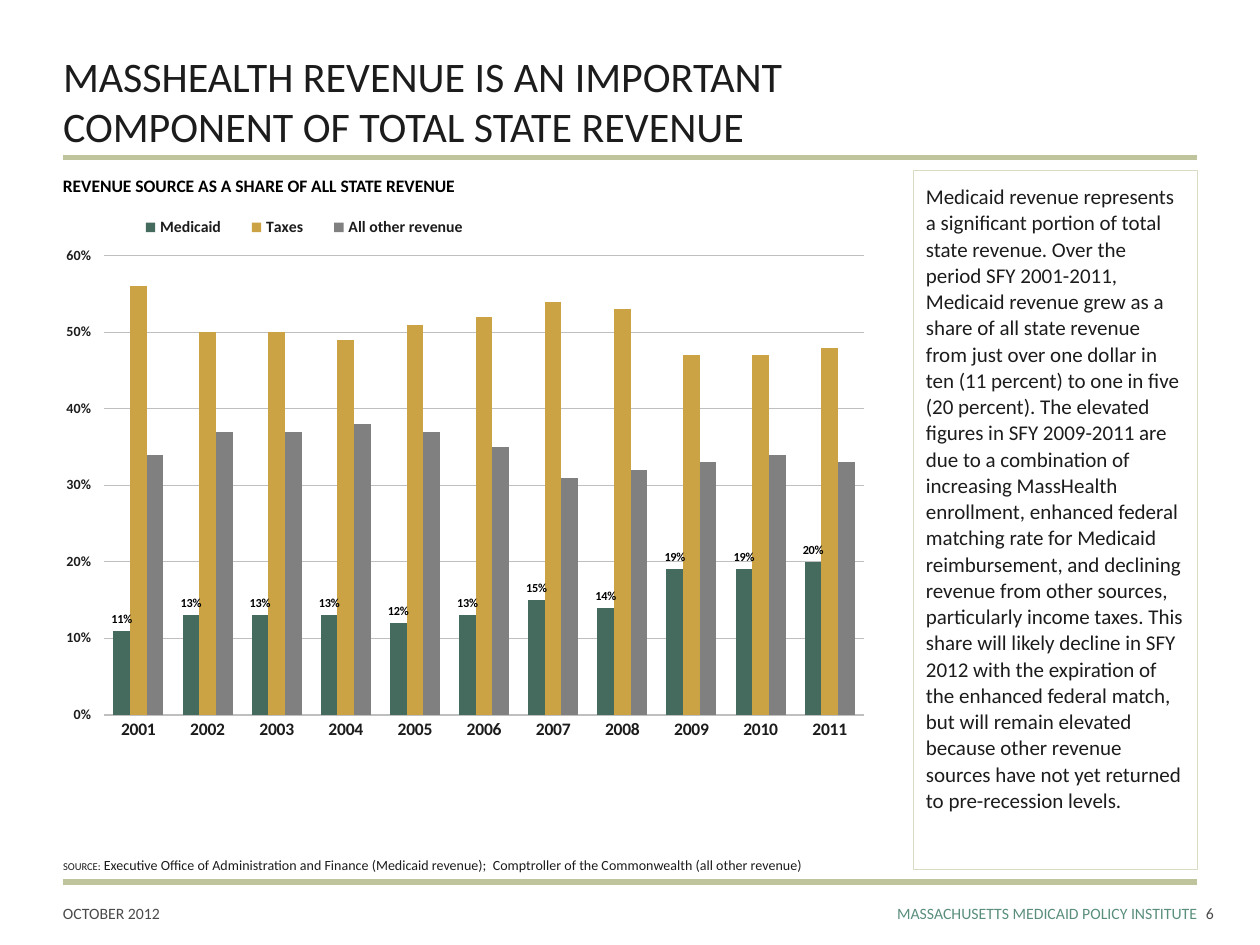
import lxml.etree
import pptx
import pptx.chart.data
import pptx.dml.color
import pptx.enum.chart
import pptx.enum.shapes
import pptx.enum.text
import pptx.oxml
import pptx.oxml.ns
import pptx.util

PX = 9144
FONT = "Calibri"
INK, BLACK, GREY, GREEN, RULE = "1C1C1C", "000000", "4B4B4B", "5A8F7C", "BFC49D"
ALIGN = pptx.enum.text.PP_ALIGN
ANCHOR = pptx.enum.text.MSO_ANCHOR

YEARS = [str(year) for year in range(2001, 2012)]
SERIES = [
    ("Medicaid", "446B5D", [0.11, 0.13, 0.13, 0.13, 0.12, 0.13, 0.15, 0.14, 0.19, 0.19, 0.2]),
    ("Taxes", "CBA344", [0.56, 0.5, 0.5, 0.49, 0.51, 0.52, 0.54, 0.53, 0.47, 0.47, 0.48]),
    ("All other revenue", "808080", [0.34, 0.37, 0.37, 0.38, 0.37, 0.35, 0.31, 0.32, 0.33, 0.34, 0.33]),
]
COMMENTARY = (
    "Medicaid revenue represents a significant portion of total state revenue. "
    "Over the period SFY 2001-2011, Medicaid revenue grew as a share of all state revenue "
    "from just over one dollar in ten (11 percent) to one in five (20 percent). "
    "The elevated figures in SFY 2009-2011 are due to a combination of increasing MassHealth "
    "enrollment, enhanced federal matching rate for Medicaid reimbursement, and declining "
    "revenue from other sources, particularly income taxes. This share will likely decline in "
    "SFY 2012 with the expiration of the enhanced federal match, but will remain elevated "
    "because other revenue sources have not yet returned to pre-recession levels."
)


def emu(*lengths):
    """Turn px lengths into EMU."""
    return [length * PX for length in lengths]


def color(value):
    """Return the RGB colour of a hex string."""
    return pptx.dml.color.RGBColor.from_string(value)


def style_font(font, size, value, bold=False):
    """Set face, size, colour and weight of a font."""
    font.name, font.size, font.bold = FONT, pptx.util.Pt(size), bold
    font.color.rgb = color(value)


def add_run(paragraph, text, size, value, bold=False):
    """Append one formatted run."""
    run = paragraph.add_run()
    run.text = text
    style_font(run.font, size, value, bold)


def prepare_frame(shape, insets, anchor=ANCHOR.TOP, wrap=True):
    """Set up the text frame of a shape and return its first paragraph."""
    frame = shape.text_frame
    frame.auto_size = pptx.enum.text.MSO_AUTO_SIZE.NONE
    frame.word_wrap, frame.vertical_anchor = wrap, anchor
    frame.margin_left, frame.margin_top, frame.margin_right, frame.margin_bottom = emu(*insets)
    paragraph = frame.paragraphs[0]
    paragraph.alignment = ALIGN.LEFT
    return paragraph


def add_text(slide, box, runs, insets=(0, 0, 0, 0), anchor=ANCHOR.TOP, wrap=True, align=ALIGN.LEFT):
    """Add a text box made of (text, size, colour, bold) runs."""
    paragraph = prepare_frame(slide.shapes.add_textbox(*emu(*box)), insets, anchor, wrap)
    paragraph.alignment = align
    for run in runs:
        add_run(paragraph, *run)


def add_rule(slide, left, top, width):
    """Draw a horizontal rule."""
    rule = slide.shapes.add_connector(
        pptx.enum.shapes.MSO_CONNECTOR.STRAIGHT, *emu(left, top, left + width, top))
    rule.line.color.rgb = color(RULE)
    rule.line.width = pptx.util.Pt(3)
    lxml.etree.SubElement(rule._element.spPr, pptx.oxml.ns.qn("a:effectLst"))


def add_title(slide, box, lines):
    """Fill the title placeholder, one run per line."""
    title = slide.shapes.title
    title.left, title.top, title.width, title.height = emu(*box)
    paragraph = prepare_frame(title, (0, 5, 0, 5), ANCHOR.BOTTOM)
    for index, line in enumerate(lines):
        if index:
            paragraph.add_line_break()
        add_run(paragraph, line, 24, INK)


def manual_layout(x, y, width, height, inner=False):
    """Build a chart layout element from fractions of the chart."""
    target = '<c:layoutTarget val="inner"/>' if inner else ""
    return pptx.oxml.parse_xml(
        f'<c:layout {pptx.oxml.ns.nsdecls("c")}><c:manualLayout>{target}'
        '<c:xMode val="edge"/><c:yMode val="edge"/>'
        f'<c:x val="{x}"/><c:y val="{y}"/><c:w val="{width}"/><c:h val="{height}"/>'
        '</c:manualLayout></c:layout>')


def place_part(element, layout):
    """Give a chart part its manual layout."""
    for previous in element.findall(pptx.oxml.ns.qn("c:layout")):
        element.remove(previous)
    position = element.find(pptx.oxml.ns.qn("c:legendPos"))
    element.insert(0 if position is None else element.index(position) + 1, layout)


def style_axes(chart):
    """Format the year and percentage axes."""
    enum = pptx.enum.chart
    years, shares = chart.category_axis, chart.value_axis
    for axis, size in ((years, 10), (shares, 8)):
        axis.format.line.fill.background()
        axis.minor_tick_mark = enum.XL_TICK_MARK.NONE
        style_font(axis.tick_labels.font, size, INK, True)
    years.major_tick_mark = enum.XL_TICK_MARK.NONE
    shares.major_tick_mark = enum.XL_TICK_MARK.CROSS
    shares.minimum_scale, shares.maximum_scale, shares.major_unit = 0, 0.6, 0.1
    shares.tick_labels.number_format = "0%"
    shares.tick_labels.number_format_is_linked = False
    shares.major_gridlines.format.line.color.rgb = color("BFBFBF")
    shares.major_gridlines.format.line.width = pptx.util.Pt(0.75)


def add_revenue_chart(slide, box):
    """Add the clustered columns of revenue shares."""
    enum = pptx.enum.chart
    data = pptx.chart.data.CategoryChartData(number_format="0%")
    data.categories = YEARS
    for name, _, values in SERIES:
        data.add_series(name, values)
    chart = slide.shapes.add_chart(enum.XL_CHART_TYPE.COLUMN_CLUSTERED, *emu(*box), data).chart
    chart.has_title = False
    style_font(chart.font, 8, INK, True)
    style_axes(chart)
    chart.has_legend = True
    chart.legend.position = enum.XL_LEGEND_POSITION.TOP
    chart.legend.include_in_layout = False
    style_font(chart.legend.font, 9, INK, True)
    place_part(chart.legend._element, manual_layout(0.07, 0.02, 0.45, 0.06))
    plot = chart.plots[0]
    plot.gap_width, plot.overlap, plot.vary_by_categories = 115, 0, False
    place_part(chart._chartSpace.chart.plotArea, manual_layout(0.05, 0.1, 0.93, 0.81, inner=True))
    for series, (_, fill, _) in zip(plot.series, SERIES):
        series.format.fill.solid()
        series.format.fill.fore_color.rgb = color(fill)
    labels = plot.series[0].data_labels
    labels.show_value = True
    labels.number_format, labels.number_format_is_linked = "0%", False
    labels.position = enum.XL_LABEL_POSITION.OUTSIDE_END
    style_font(labels.font, 7, BLACK, True)


def add_chart_region(slide, left, top, width, height):
    """Place the heading, chart and source note in a box."""
    add_text(slide, (left, top, 490, 27),
             [("REVENUE SOURCE AS A SHARE OF ALL STATE REVENUE", 10, BLACK, True)],
             (0, 5, 0, 5), wrap=False)
    add_revenue_chart(slide, (left, top + 24, width, 450))
    source = [("SOURCE", 6, INK), (":", 6, BLACK), (" ", 8, BLACK),
              ("Executive Office of Administration and Finance (Medicaid revenue);  "
               "Comptroller of the Commonwealth (all other revenue)", 8, INK)]
    add_text(slide, (left, top + height - 24, width, 24), source, (0, 5, 0, 5), ANCHOR.BOTTOM)


def add_commentary(slide, box):
    """Add the outlined commentary panel."""
    panel = slide.shapes.add_shape(pptx.enum.shapes.MSO_SHAPE.RECTANGLE, *emu(*box))
    panel.shadow.inherit = False
    panel.fill.background()
    panel.line.color.rgb = color("D9DCC4")
    panel.line.width = pptx.util.Pt(0.25)
    paragraph = prepare_frame(panel, (10, 10, 10, 5))
    paragraph.line_spacing, paragraph.space_before = pptx.util.Pt(15), pptx.util.Pt(6)
    add_run(paragraph, COMMENTARY, 12, INK)


def add_footer(slide, left, top, width):
    """Place the rule, date, publisher and page number."""
    add_rule(slide, left, top, width)
    right = left + width
    add_text(slide, (left, top + 17, 100, 32), [("OCTOBER 2012", 9, GREY)])
    add_text(slide, (right - 431, top + 17, 431, 32),
             [("MASSACHUSETTS MEDICAID POLICY INSTITUTE", 9, GREEN)], align=ALIGN.RIGHT)
    add_text(slide, (right + 7, top + 17, 43, 32), [("6", 9, GREY)])


def main():
    """Build and save the slide."""
    presentation = pptx.Presentation()
    presentation.slide_width, presentation.slide_height = emu(1000, 750)
    slide = presentation.slides.add_slide(presentation.slide_layouts[5])
    add_title(slide, (50, 38, 900, 87),
              ["MASSHEALTH REVENUE IS AN IMPORTANT ", "COMPONENT OF TOTAL STATE REVENUE"])
    add_rule(slide, 50, 125, 900)
    add_chart_region(slide, 50, 134, 649, 564)
    add_commentary(slide, (725, 135, 225, 555))
    add_footer(slide, 50, 700, 900)
    presentation.save("out.pptx")


if __name__ == "__main__":
    main()
